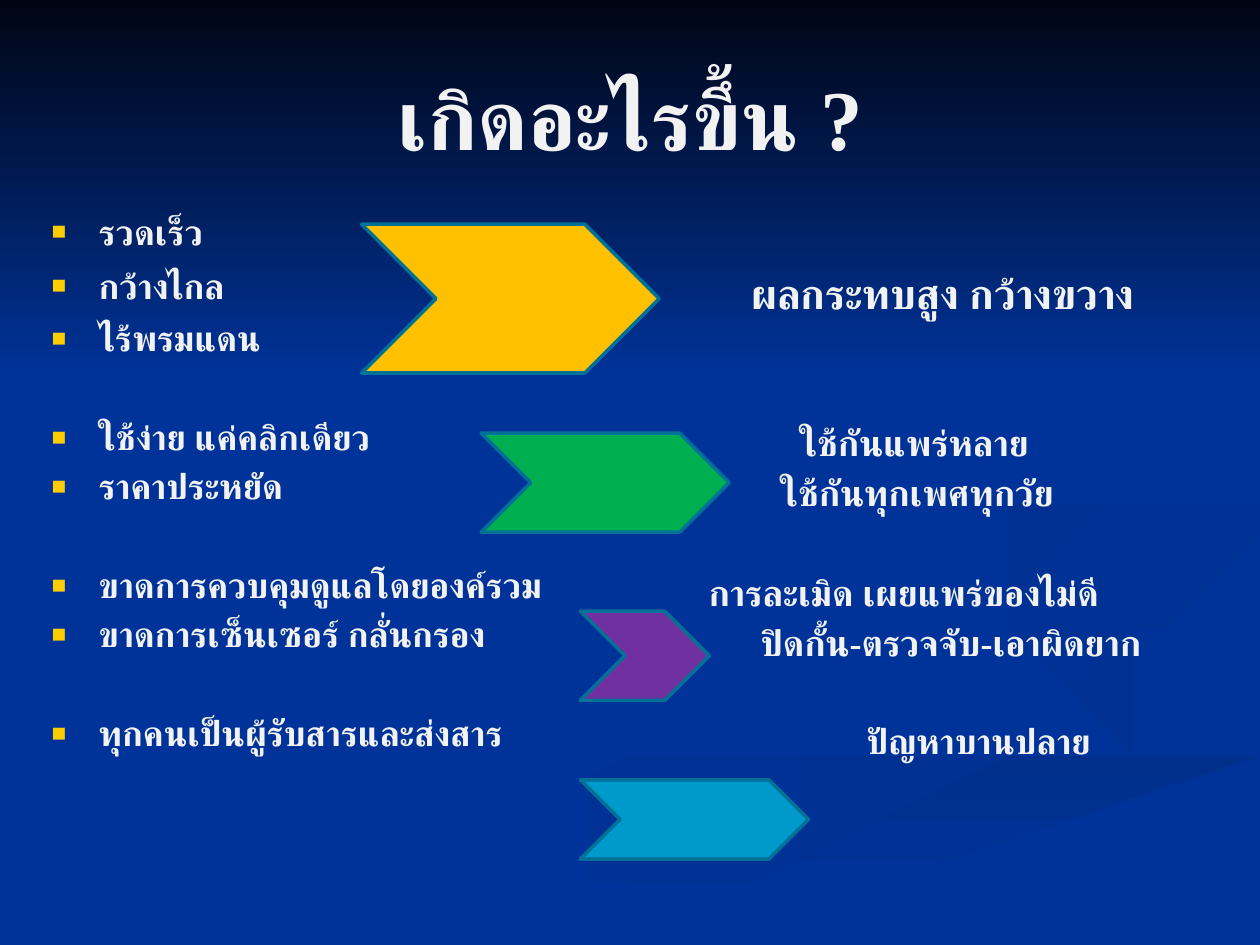
"""Build the Thai slide on what happened and its effects, with four chevrons."""
from lxml import etree
from pptx import Presentation, util as u
from pptx.dml import color
from pptx.enum import shapes, text
from pptx.oxml import ns

FONT = "Times New Roman"
BLUE = "003399"


def rgb(value):
    return color.RGBColor.from_string(value)


def write(paragraph, words, size=20, align=text.PP_ALIGN.LEFT, before=0, bullet=None):
    paragraph.alignment = align
    paragraph.space_before = u.Pt(before)
    run = paragraph.add_run()
    run.text = words
    run.font.name, run.font.size, run.font.bold = FONT, u.Pt(size), True
    run.font.color.rgb = rgb("F2F2F2")
    complex_font = etree.SubElement(run.font._element, ns.qn("a:cs"))
    complex_font.set("typeface", FONT)
    if bullet:
        properties = paragraph._p.get_or_add_pPr()
        properties.set("marL", str(u.Cm(0.95)))
        properties.set("indent", str(u.Cm(-0.95)))
        bullet_color = etree.SubElement(properties, ns.qn("a:buClr"))
        etree.SubElement(bullet_color, ns.qn("a:srgbClr")).set("val", "FFCC00")
        etree.SubElement(properties, ns.qn("a:buSzPct")).set("val", "70000")
        etree.SubElement(properties, ns.qn("a:buFont")).set("typeface", "Arial")
        etree.SubElement(properties, ns.qn("a:buChar")).set("char", bullet)


presentation = Presentation()
presentation.slide_width, presentation.slide_height = u.Cm(25.4), u.Cm(19.05)
slide = presentation.slides.add_slide(presentation.slide_layouts[6])
slide.background.fill.solid()
slide.background.fill.fore_color.rgb = rgb(BLUE)

backdrop = [
    (BLUE, "003193", 0, [
        (7.8, 5.5), (6.8, 5.2), (5.9, 4.8), (5.7, 4.7), (6, 4.95), (7.4, 5.4), (7.85, 5.7),
        (7.4, 6), (5.4, 6.5), (3, 7.49), (3.6, 7.49), (5.6, 6.65), (7.6, 6.1), (8, 5.8)]),
    (BLUE, "003193", 45, [
        (9.4, 5.7), (9, 5.4), (7.6, 5), (7.2, 4.6), (7.5, 5), (8.9, 5.5), (9.2, 5.8),
        (8.9, 6.05), (9.3, 5.9)]),
    ("002F8C", BLUE, 90, [
        (5, 7.49), (5.7, 7.49), (7.2, 6.8), (10, 6.1), (10, 5.8), (7.6, 6.5), (6.3, 6.9)]),
    ("003091", BLUE, 45, [
        (7.8, 4.6), (8.25, 4.95), (8.05, 4.7), (8.4, 4.5), (10, 4.2), (10, 4), (8.3, 4.3)]),
    ("002F8E", BLUE, 45, [
        (6.8, 4.3), (8.2, 4), (8.8, 3.7), (8.9, 3.3), (8.6, 2.9), (7.6, 2.33), (8.7, 3),
        (8.85, 3.5), (8.4, 3.8), (6.2, 4.3), (5.8, 4.6), (6.2, 5), (5.95, 4.65), (6.2, 4.4)]),
    ("000514", BLUE, 90, [(0, 0), (0, 3.08), (10, 3.08), (10, 0)]),
]
for start, end, angle, points in backdrop:
    builder = slide.shapes.build_freeform(*points[0], scale=u.Cm(2.54))
    builder.add_line_segments(points[1:], close=True)
    shape = builder.convert_to_shape()
    shape.shadow.inherit = False
    shape.line.fill.background()
    shape.fill.gradient()
    shape.fill.gradient_angle = -angle % 360
    for stop, value in zip(shape.fill.gradient_stops, (start, end)):
        stop.color.rgb = rgb(value)

title = slide.shapes.add_textbox(u.Cm(1.27), u.Cm(0.76), u.Cm(22.86), u.Cm(3.18)).text_frame
title.word_wrap = True
title.vertical_anchor = text.MSO_ANCHOR.MIDDLE
write(title.paragraphs[0], "เกิดอะไรขึ้น ?", size=48.6, align=text.PP_ALIGN.CENTER)

causes = [
    ("รวดเร็ว", 4), ("กว้างไกล", 7), ("ไร้พรมแดน", 6),
    ("ใช้ง่าย แค่คลิกเดียว", 32.5), ("ราคาประหยัด", 4),
    ("ขาดการควบคุมดูแลโดยองค์รวม", 32.5), ("ขาดการเซ็นเซอร์ กลั่นกรอง", 4),
    ("ทุกคนเป็นผู้รับสารและส่งสาร", 32.5),
]
body = slide.shapes.add_textbox(u.Cm(0.79), u.Cm(4.11), u.Cm(13), u.Cm(13.59)).text_frame
body.word_wrap = True
for index, (words, before) in enumerate(causes):
    paragraph = body.add_paragraph() if index else body.paragraphs[0]
    write(paragraph, words, before=before, bullet="■")

effects = [
    ("ผลกระทบสูง กว้างขวาง", 19.01, 5.9, 23.8),
    ("ใช้กันแพร่หลาย", 18.43, 8.92, 20.6),
    ("ใช้กันทุกเพศทุกวัย", 18.49, 9.93, 20.6),
    ("การละเมิด เผยแพร่ของไม่ดี", 18.22, 11.94, 20.6),
    ("ปิดกั้น-ตรวจจับ-เอาผิดยาก", 19.17, 12.95, 20.6),
    ("ปัญหาบานปลาย", 19.73, 14.93, 20),
]
width, height = 10, 1.2
for words, center, middle, size in effects:
    effect = slide.shapes.add_textbox(u.Cm(center - width / 2), u.Cm(middle - height / 2),
                                      u.Cm(width), u.Cm(height)).text_frame
    effect.word_wrap = True
    effect.vertical_anchor = text.MSO_ANCHOR.MIDDLE
    write(effect.paragraphs[0], words, size=size, align=text.PP_ALIGN.CENTER)

chevrons = [
    ("FFC000", 7.29, 4.52, 6, 3),
    ("00B050", 9.7, 8.73, 5, 2),
    ("7030A0", 11.7, 12.32, 2.6, 1.8),
    ("0099CC", 11.7, 15.72, 4.6, 1.6),
]
for fill, *place in chevrons:
    shape = slide.shapes.add_shape(shapes.MSO_SHAPE.CHEVRON, *map(u.Cm, place))
    shape.shadow.inherit = False
    shape.fill.solid()
    shape.fill.fore_color.rgb = rgb(fill)
    shape.line.color.rgb = rgb("007197")
    shape.line.width = u.Pt(2)

presentation.save("out.pptx")
